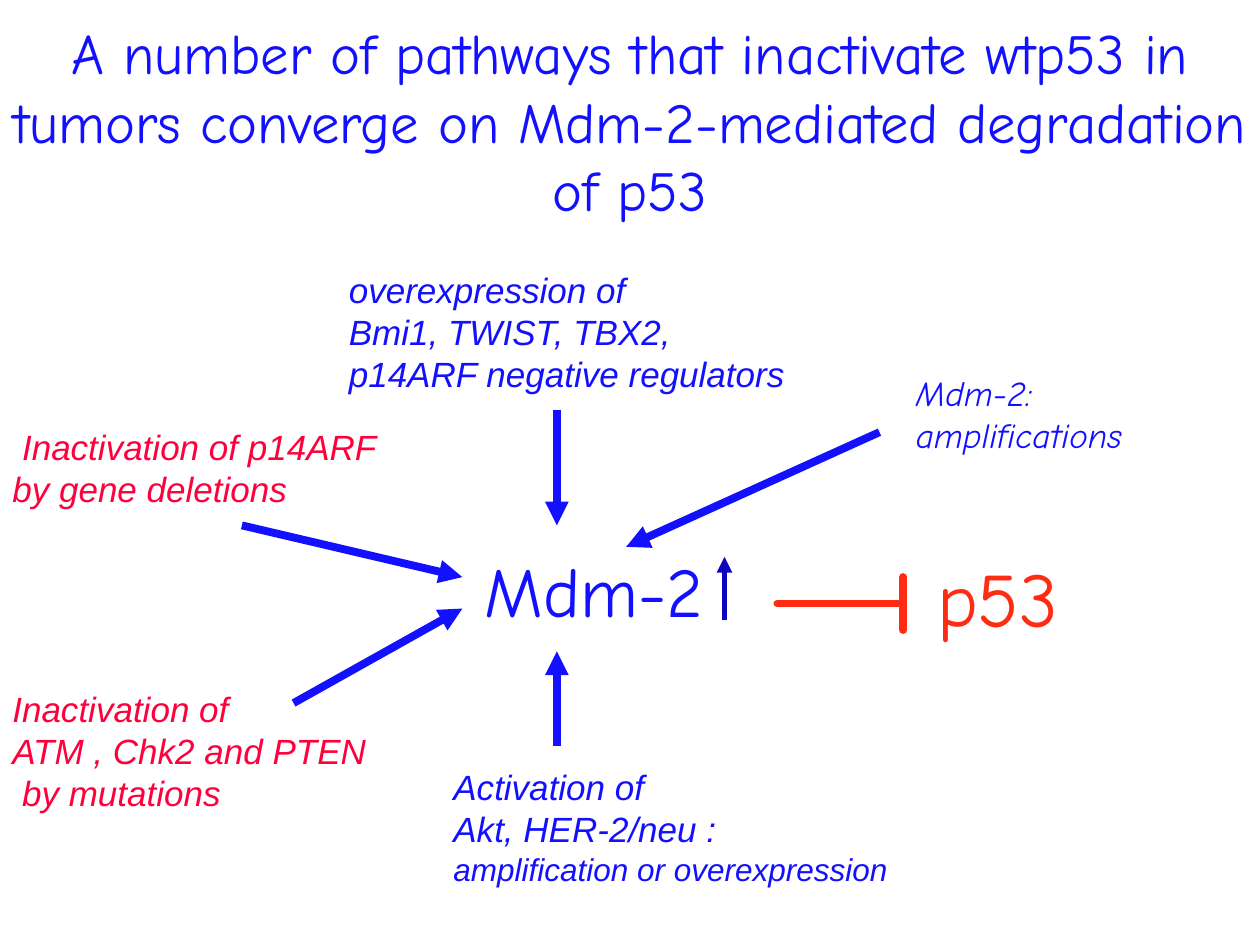
import dataclasses

import pptx
import pptx.dml.color
import pptx.enum.shapes
import pptx.enum.text
import pptx.oxml
import pptx.oxml.ns
import pptx.slide
import pptx.util
from pptx.util import Inches

BLUE = pptx.dml.color.RGBColor(0x13, 0x10, 0xFF)
DARK_BLUE = pptx.dml.color.RGBColor(0x0D, 0x05, 0xBD)
CRIMSON = pptx.dml.color.RGBColor(0xFF, 0x00, 0x3C)
RED = pptx.dml.color.RGBColor(0xFF, 0x2C, 0x14)

ARIAL = "Arial"
COMIC = "Comic Neue"
LEFT = pptx.enum.text.PP_ALIGN.LEFT
CENTER = pptx.enum.text.PP_ALIGN.CENTER


@dataclasses.dataclass(frozen=True)
class Label:
    """A block of text; at is left, top, width, height in inches."""
    at: tuple[float, float, float, float]
    lines: tuple[str, ...]
    color: pptx.dml.color.RGBColor = BLUE
    font: str = ARIAL
    size: float = 20
    italic: bool = True
    align: pptx.enum.text.PP_ALIGN = LEFT
    anchor: pptx.enum.text.MSO_ANCHOR = pptx.enum.text.MSO_ANCHOR.TOP
    last_size: float | None = None


@dataclasses.dataclass(frozen=True)
class Arrow:
    """A straight arrow between two points in inches."""
    start: tuple[float, float]
    end: tuple[float, float]
    color: pptx.dml.color.RGBColor = BLUE
    width: float = 4.5


TITLE = Label(
    (0, 0.33, 10, 1.25),
    ("A number of pathways that inactivate wtp53 in tumors converge on "
     "Mdm-2-mediated degradation of p53",),
    font=COMIC, size=32.4, italic=False, align=CENTER,
    anchor=pptx.enum.text.MSO_ANCHOR.MIDDLE)

PROTEINS = (
    Label((3.75, 4.3, 1.94, 0.8), ("Mdm-2",), font=COMIC, size=40, italic=False),
    Label((6.92, 4.32, 2, 0.8), ("p53",), RED, COMIC, 44, False, CENTER),
)

PATHWAYS = (
    Label((0, 3.33, 3.33, 0.77),
          (" Inactivation of p14ARF", "by gene deletions"), CRIMSON),
    Label((0, 5.41, 3.1, 1.1),
          ("Inactivation of", "ATM , Chk2 and PTEN", " by mutations"), CRIMSON),
    Label((3.5, 6.03, 4.03, 1.1),
          ("Activation of", "Akt, HER-2/neu :", "amplification or overexpression"),
          last_size=18),
    Label((2.67, 2.08, 3.89, 1.1),
          ("overexpression of", "Bmi1, TWIST, TBX2,", "p14ARF negative regulators")),
    Label((7.17, 2.9, 1.95, 0.8), ("Mdm-2:", "amplifications"), font=COMIC),
)

ARROWS = (
    Arrow((6.98, 3.43), (4.97, 4.34)),
    Arrow((1.92, 4.17), (3.67, 4.58)),
    Arrow((2.33, 5.58), (3.67, 4.83)),
    Arrow((4.42, 5.92), (4.42, 5.17)),
    Arrow((4.42, 3.25), (4.42, 4.17)),
    Arrow((5.75, 4.92), (5.75, 4.42), DARK_BLUE, 3),
)


def add_label(page: pptx.slide.Slide, label: Label) -> None:
    box = page.shapes.add_textbox(*map(Inches, label.at))
    frame = box.text_frame
    frame.word_wrap = True
    frame.vertical_anchor = label.anchor
    for index, line in enumerate(label.lines):
        para = frame.add_paragraph() if index else frame.paragraphs[0]
        para.alignment = label.align
        span = para.add_run()
        span.text = line
        is_last = index == len(label.lines) - 1
        size = label.last_size if is_last and label.last_size else label.size
        formats = {"name": label.font, "size": pptx.util.Pt(size),
                   "italic": label.italic}
        for name, value in formats.items():
            setattr(span.font, name, value)
        span.font.color.rgb = label.color


def add_arrow(page: pptx.slide.Slide, arrow: Arrow) -> None:
    connector = page.shapes.add_connector(
        pptx.enum.shapes.MSO_CONNECTOR.STRAIGHT,
        *map(Inches, arrow.start + arrow.end))
    connector.line.color.rgb = arrow.color
    connector.line.width = pptx.util.Pt(arrow.width)
    # Arrowhead at the end, and no shadow
    head = pptx.oxml.parse_xml(
        f'<a:tailEnd {pptx.oxml.ns.nsdecls("a")} type="triangle"/>')
    connector.line._get_or_add_ln().append(head)
    connector._element.spPr.append(
        pptx.oxml.parse_xml(f'<a:effectLst {pptx.oxml.ns.nsdecls("a")}/>'))


def add_inhibition(page: pptx.slide.Slide) -> None:
    """A right arrow flattened to a stem with a bar across its end."""
    sign = page.shapes.add_shape(
        pptx.enum.shapes.MSO_SHAPE.RIGHT_ARROW,
        Inches(6.17), Inches(4.58), Inches(1), Inches(0.42))
    for index in range(2):
        sign.adjustments[index] = 0
    sign.shadow.inherit = False
    sign.fill.background()
    sign.line.color.rgb = RED
    sign.line.width = pptx.util.Pt(4.5)


def main() -> None:
    deck = pptx.Presentation()
    deck.slide_width, deck.slide_height = Inches(10), Inches(7.5)
    page = deck.slides.add_slide(deck.slide_layouts[6])

    # Title, proteins and the pathways around them
    for label in (TITLE, *PROTEINS, *PATHWAYS):
        add_label(page, label)

    # Effects on Mdm-2, and of Mdm-2 on p53
    for arrow in ARROWS:
        add_arrow(page, arrow)
    add_inhibition(page)

    deck.save("out.pptx")


if __name__ == "__main__":
    main()
